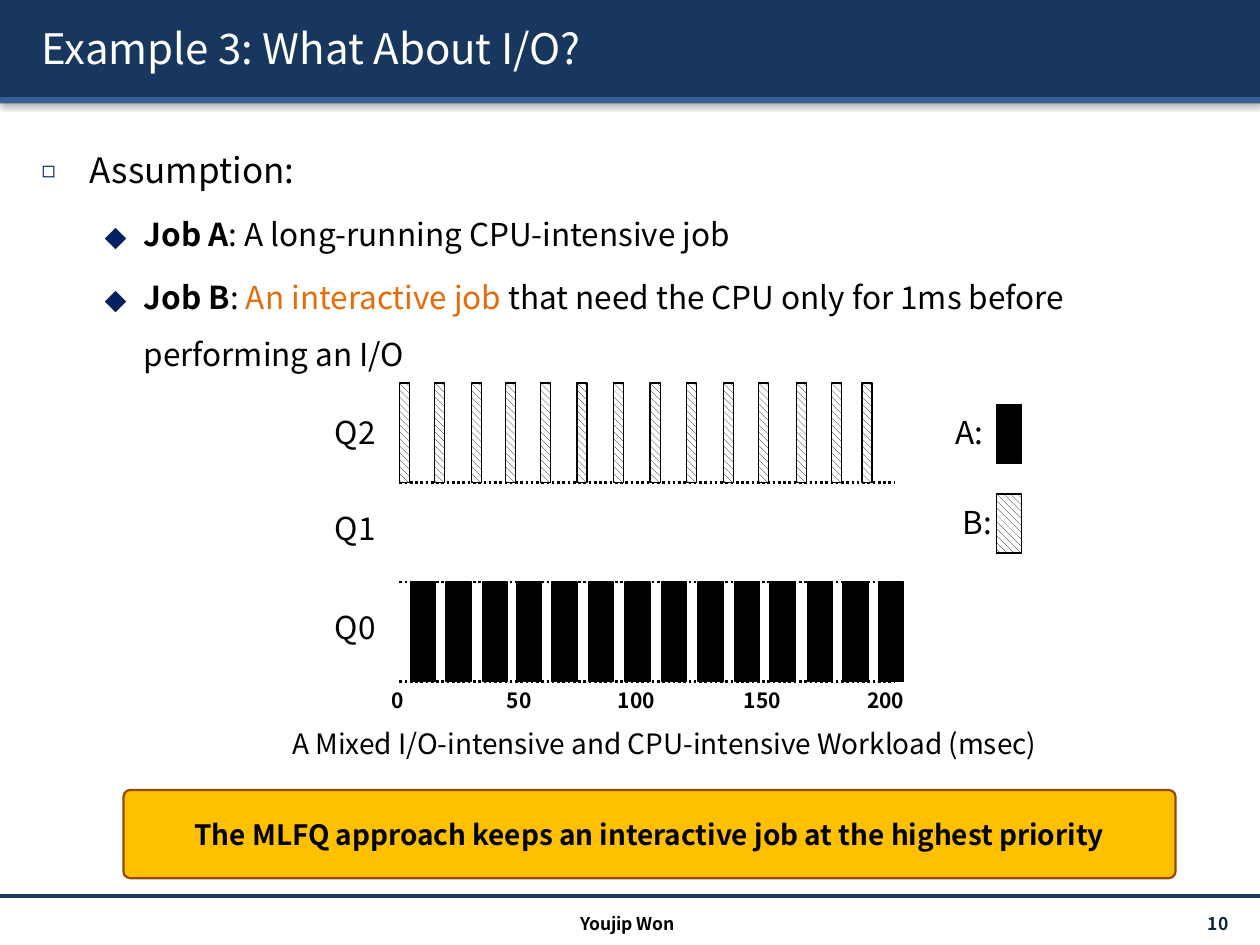
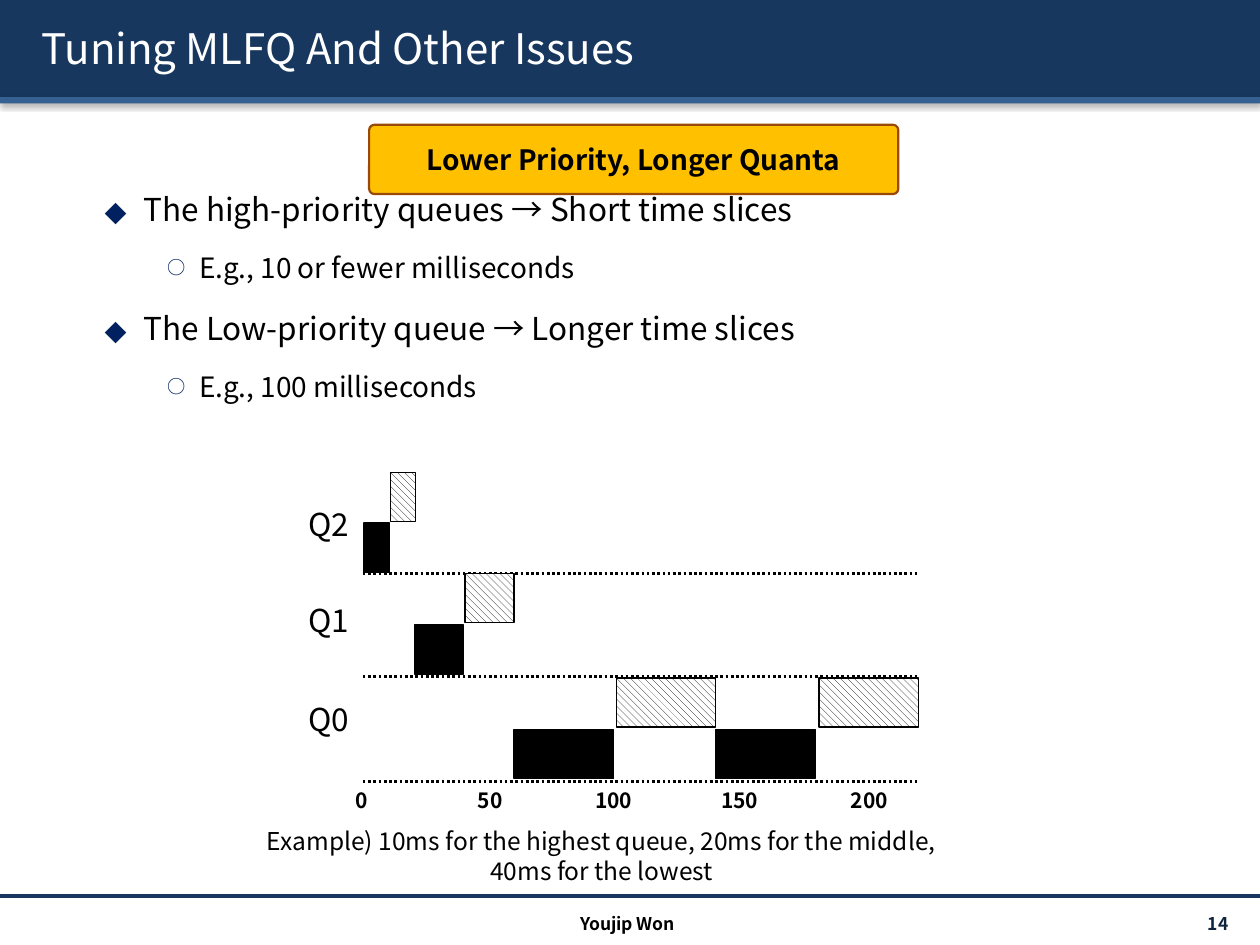
from lxml import etree
from pptx import Presentation
from pptx.dml.color import RGBColor
from pptx.enum import dml, shapes, text
from pptx.oxml.ns import qn
from pptx.util import Inches, Pt

FONT = "Noto Sans CJK KR"
COLORS = {
    "navy": "17375E", "blue": "376092", "bullet": "002060", "number": "0F243E",
    "black": "000000", "white": "FFFFFF", "orange": "E46C0A",
    "gold": "FFC000", "brown": "984807",
}
LEVELS = [
    {"size": 20, "left": 0.38, "hang": 0.38, "char": "◻", "scale": 65},
    {"size": 18, "left": 0.81, "hang": 0.31, "char": "⬥", "scale": 100},
    {"size": 16, "left": 1.25, "hang": 0.25, "char": "○", "scale": 65},
]
ALIGN = text.PP_ALIGN
MIDDLE = text.MSO_ANCHOR.MIDDLE
TICKS = [0, 50, 100, 150, 200]
QUEUE_OFFSETS = {"Q2": 0, "Q1": 0.76, "Q0": 1.55}


def rgb(name):
    return RGBColor.from_string(COLORS[name])


def sub(parent, tag, **attrs):
    return etree.SubElement(parent, qn(tag), {k: str(v) for k, v in attrs.items()})


def add_shadow(effects, blur, dist, angle, alpha):
    shadow = sub(effects, "a:outerShdw", blurRad=Pt(blur), dist=Pt(dist),
                 dir=angle * 60000, algn="t", rotWithShape=0)
    color = sub(shadow, "a:srgbClr", val=COLORS["black"])
    sub(color, "a:alpha", val=alpha * 1000)


def add_run(p, content, size=18, bold=False, color="black"):
    r = p.add_run()
    r.text = content
    r.font.size = Pt(size)
    r.font.bold = bold
    r.font.name = FONT
    r.font.color.rgb = rgb(color)
    sub(r.font._element, "a:ea", typeface=FONT)
    return r


def set_frame(tf, margins=(0, 0.05), anchor=text.MSO_ANCHOR.TOP):
    tf.word_wrap = True
    tf.vertical_anchor = anchor
    tf.margin_left = tf.margin_right = Inches(margins[0])
    tf.margin_top = tf.margin_bottom = Inches(margins[1])


def add_text(slide, at, lines, align=ALIGN.CENTER, anchor=text.MSO_ANCHOR.TOP, **fmt):
    tf = slide.shapes.add_textbox(*map(Inches, at)).text_frame
    set_frame(tf, anchor=anchor)
    for i, line in enumerate(lines.split("\n")):
        p = tf.add_paragraph() if i else tf.paragraphs[0]
        p.alignment = align
        add_run(p, line, **fmt)
    return tf


def add_box(slide, at, fill, line=None, weight=0.75, kind=shapes.MSO_SHAPE.RECTANGLE):
    sp = slide.shapes.add_shape(kind, *map(Inches, at))
    sp.shadow.inherit = False
    if fill == "hatch":
        sp.fill.patterned()
        sp.fill.pattern = dml.MSO_PATTERN.WIDE_DOWNWARD_DIAGONAL
        sp.fill.fore_color.rgb = rgb("black")
        sp.fill.back_color.rgb = rgb("white")
    else:
        sp.fill.solid()
        sp.fill.fore_color.rgb = rgb(fill)
    if line:
        sp.line.color.rgb = rgb(line)
        sp.line.width = Pt(weight)
    else:
        sp.line.fill.background()
    return sp


def add_job(slide, job, at):
    add_box(slide, at, {"A": "black", "B": "hatch"}[job], "black")


def add_rule(slide, left, right, y, color="black", weight=1.5, dotted=True):
    line = slide.shapes.add_connector(
        shapes.MSO_CONNECTOR.STRAIGHT, *map(Inches, (left, y, right, y)))
    line.line.color.rgb = rgb(color)
    line.line.width = Pt(weight)
    if dotted:
        line.line.dash_style = dml.MSO_LINE.ROUND_DOT
    sub(line._element.spPr, "a:effectLst")


def add_banner(slide, at, content):
    sp = add_box(slide, at, "gold", "brown", 1.25, shapes.MSO_SHAPE.ROUNDED_RECTANGLE)
    sp.adjustments[0] = 0.077
    tf = sp.text_frame
    set_frame(tf, (0.12, 0.05), MIDDLE)
    tf.paragraphs[0].alignment = ALIGN.CENTER
    add_run(tf.paragraphs[0], content, size=16, bold=True)


def add_bullets(slide, top, items):
    tf = slide.shapes.add_textbox(*map(Inches, (0.33, top, 9.41, 6.98 - top))).text_frame
    set_frame(tf)
    for i, (level, runs) in enumerate(items):
        p = tf.add_paragraph() if i else tf.paragraphs[0]
        look = LEVELS[level]
        pPr = p._p.get_or_add_pPr()
        pPr.set("marL", str(Inches(look["left"])))
        pPr.set("indent", str(-Inches(look["hang"])))
        sub(sub(pPr, "a:buClr"), "a:srgbClr", val=COLORS["bullet"])
        sub(pPr, "a:buSzPct", val=look["scale"] * 1000)
        sub(pPr, "a:buFont", typeface=FONT)
        sub(pPr, "a:buChar", char=look["char"])
        p.line_spacing = 1.5
        p.space_before = Pt(look["size"] * 0.2 if i else 0)
        for content, fmt in runs:
            add_run(p, content, size=look["size"], **fmt)


def add_axis(slide, centers, top):
    for center, tick in zip(centers, TICKS):
        add_text(slide, (center - 0.3, top, 0.6, 0.3), str(tick), size=12, bold=True)


def add_queue_names(slide, right, top):
    for name, offset in QUEUE_OFFSETS.items():
        add_text(slide, (right - 0.59, top + offset, 0.59, 0.4), name, ALIGN.RIGHT)


def add_base(prs, title, number):
    slide = prs.slides.add_slide(prs.slide_layouts[6])
    for top, height, color in [(0, 0.77, "navy"), (0.77, 0.05, "blue")]:
        band = add_box(slide, (0, top, 10, height), color)
        add_shadow(band._element.spPr.find(qn("a:effectLst")), 3.1, 1.6, 90, 38)
    add_rule(slide, 0, 10, 7.11, "navy", 2, dotted=False)
    tf = add_text(slide, (0.33, 0.06, 9.41, 0.64), title, ALIGN.LEFT, MIDDLE,
                  size=24, color="white")
    effects = etree.Element(qn("a:effectLst"))
    add_shadow(effects, 3, 2, 45, 100)
    tf.paragraphs[0].runs[0].font._element.find(qn("a:solidFill")).addnext(effects)
    add_text(slide, (8.71, 7.21, 1.04, 0.24), str(number), ALIGN.RIGHT, MIDDLE,
             size=10, bold=True, color="number")
    add_text(slide, (3.32, 7.2, 3.32, 0.24), "Youjip Won", size=10, bold=True)
    return slide


def build_io_example(prs):
    slide = add_base(prs, "Example 3: What About I/O?", 10)
    bold = {"bold": True}
    add_bullets(slide, 0.96, [
        (0, [("Assumption:", {})]),
        (1, [("Job A", bold), (": A long-running CPU-intensive job", {})]),
        (1, [("Job B", bold), (": ", {}), ("An interactive job ", {"color": "orange"}),
             ("that need the CPU only for 1ms before performing an I/O", {})]),
    ])
    add_text(slide, (1.69, 5.72, 7.17, 0.37),
             "A Mixed I/O-intensive and CPU-intensive Workload (msec)", size=16)
    for y in (3.83, 4.62, 5.41):
        add_rule(slide, 3.17, 7.1, y)
    add_axis(slide, (3.16, 4.12, 5.05, 6.05, 7.03), 5.41)
    add_queue_names(slide, 2.98, 3.23)
    for job, top, label_left in [("A", 3.21, 7.41), ("B", 3.92, 7.47)]:
        add_job(slide, job, (7.91, top, 0.2, 0.47))
        add_text(slide, (label_left, top + 0.02, 0.57, 0.4), f"{job}:")
    io_starts = [3.17, 3.45, 3.74, 4.01, 4.29, 4.58, 4.87,
                 5.16, 5.45, 5.74, 6.02, 6.32, 6.6, 6.84]
    cpu_starts = [start + 0.09 for start in io_starts[:-1]] + [6.97]
    for io_start, cpu_start in zip(io_starts, cpu_starts):
        add_job(slide, "B", (io_start, 3.04, 0.08, 0.79))
        add_job(slide, "A", (cpu_start, 4.62, 0.2, 0.79))
    add_banner(slide, (0.98, 6.27, 8.35, 0.7),
               "The MLFQ approach keeps an interactive job at the highest priority")


def build_tuning(prs):
    slide = add_base(prs, "Tuning MLFQ And Other Issues", 14)
    add_bullets(slide, 1.31, [(level, [(line, {})]) for level, line in [
        (1, "The high-priority queues → Short time slices"),
        (2, "E.g., 10 or fewer milliseconds"),
        (1, "The Low-priority queue → Longer time slices"),
        (2, "E.g., 100 milliseconds"),
    ]])
    for y in (4.55, 5.37, 6.2):
        add_rule(slide, 2.88, 7.28, y)
    add_axis(slide, (2.87, 3.89, 4.87, 5.87, 6.9), 6.2)
    add_queue_names(slide, 2.77, 3.96)
    for job, left, top, width in [
        ("B", 3.1, 3.75, 0.2), ("A", 2.89, 4.15, 0.2),
        ("B", 3.69, 4.55, 0.39), ("A", 3.29, 4.96, 0.39),
        ("B", 4.89, 5.38, 0.79), ("A", 4.08, 5.79, 0.79),
        ("B", 6.5, 5.38, 0.79), ("A", 5.68, 5.79, 0.79),
    ]:
        add_job(slide, job, (left, top, width, 0.39))
    add_text(slide, (1.19, 6.51, 7.17, 0.57),
             "Example) 10ms for the highest queue, 20ms for the middle,\n40ms for the lowest",
             size=14)
    add_banner(slide, (2.93, 0.99, 4.2, 0.55), "Lower Priority, Longer Quanta")


def main():
    prs = Presentation()
    prs.slide_width = Inches(10)
    prs.slide_height = Inches(7.5)
    build_io_example(prs)
    build_tuning(prs)
    prs.save("out.pptx")


if __name__ == "__main__":
    main()
